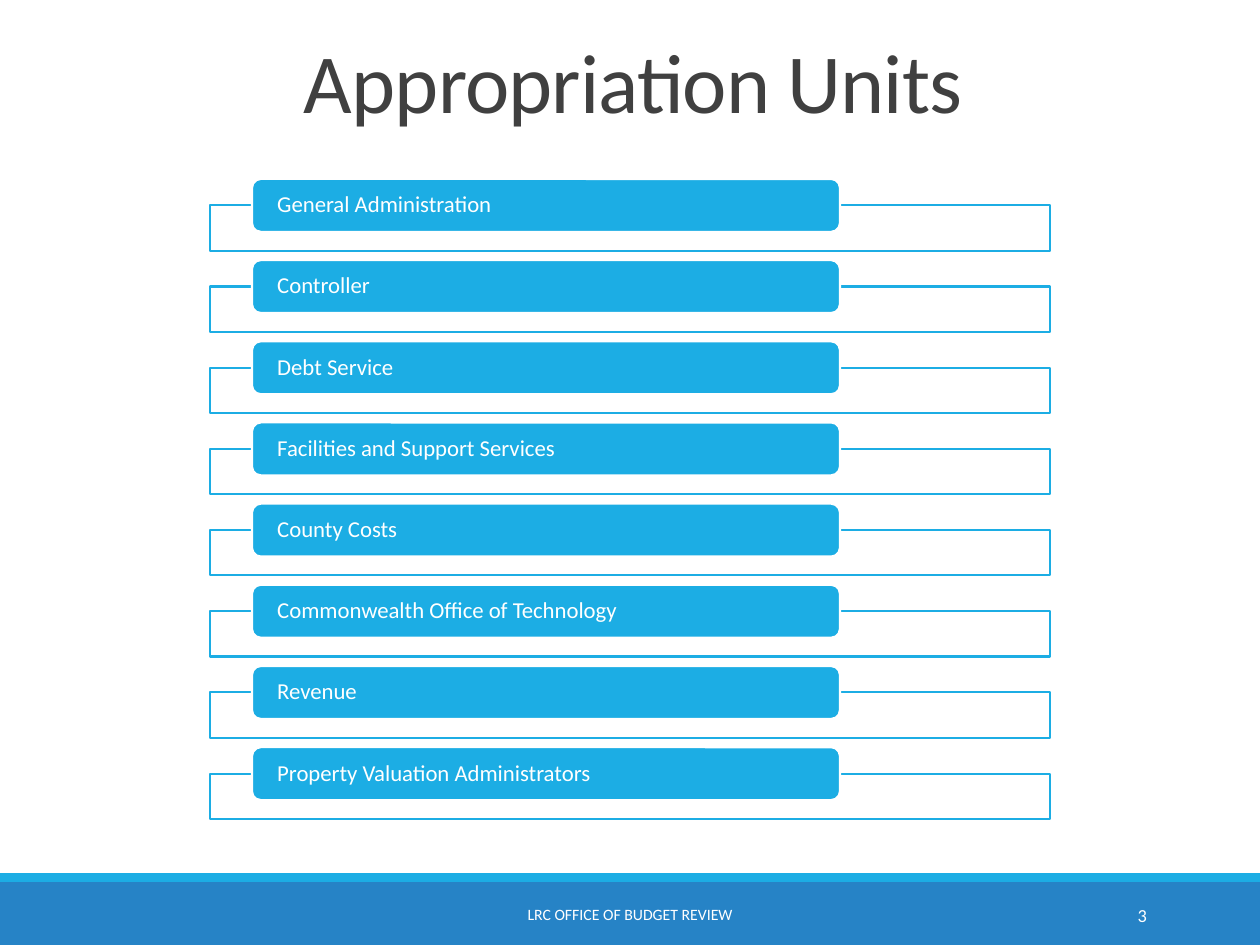
from lxml import etree
from pptx import Presentation
from pptx import util as u
from pptx.dml.color import RGBColor
from pptx.enum import shapes, text
from pptx.oxml.ns import qn

COLUMNS, ROWS = 30, 75
SKY, BLUE, WHITE, GRAY = "1CADE4", "2683C6", "FFFFFF", "404040"
UNITS = [
    "General Administration",
    "Controller",
    "Debt Service",
    "Facilities and Support Services",
    "County Costs",
    "Commonwealth Office of Technology",
    "Revenue",
    "Property Valuation Administrators",
]


def color(value):
    return RGBColor.from_string(value)


def write(frame, words, size, ink=WHITE, align=text.PP_ALIGN.LEFT,
          anchor=text.MSO_ANCHOR.MIDDLE, leading=1.0, spacing=0, inset=None):
    frame.word_wrap = True
    frame.vertical_anchor = anchor
    if inset is not None:
        frame.margin_left = frame.margin_right = u.Inches(inset)
        frame.margin_top = frame.margin_bottom = 0
    line = frame.paragraphs[0]
    line.alignment = align
    line.line_spacing = leading
    run = line.add_run()
    run.text = words
    run.font.name = "Calibri"
    run.font.size = u.Pt(size)
    run.font.color.rgb = color(ink)
    if spacing:
        run.font._element.set("spc", str(round(spacing * 100)))


class Deck:
    def __init__(self):
        self.show = Presentation()
        self.show.slide_width = u.Inches(10)
        self.show.slide_height = u.Inches(7.5)
        self.slide = self.show.slides.add_slide(self.show.slide_layouts[6])

    def place(self, column, row, columns, rows):
        across = self.show.slide_width / COLUMNS
        down = self.show.slide_height / ROWS
        return [round(n) for n in (column * across, row * down, columns * across, rows * down)]

    def box(self, *cells, fill, line=None, alpha=None, rounded=False):
        kind = shapes.MSO_SHAPE.ROUNDED_RECTANGLE if rounded else shapes.MSO_SHAPE.RECTANGLE
        box = self.slide.shapes.add_shape(kind, *self.place(*cells))
        box.shadow.inherit = False
        box.fill.solid()
        box.fill.fore_color.rgb = color(fill)
        if alpha is not None:
            tint = box.fill._xPr.find(qn("a:solidFill"))[0]
            etree.SubElement(tint, qn("a:alpha")).set("val", str(alpha * 1000))
        if line:
            box.line.color.rgb = color(line)
            box.line.width = u.Pt(1.25)
        else:
            box.line.fill.background()
        return box

    def label(self, *cells, words, **style):
        label = self.slide.shapes.add_textbox(*self.place(*cells))
        write(label.text_frame, words, **style)

    def unit(self, row, words):
        self.box(5, row + 2.1, 20, 3.6, fill=WHITE, line=SKY, alpha=90)
        tab = self.box(6, row, 14, 4.2, fill=SKY, line=WHITE, rounded=True)
        write(tab.text_frame, words, size=13, leading=0.9, inset=0.18)


def main():
    deck = Deck()
    deck.box(0, 70, COLUMNS, 5, fill=BLUE)
    deck.box(0, 69.3, COLUMNS, 0.7, fill=SKY)
    deck.label(9.06, 70.6, 11.88, 4, words="LRC OFFICE OF BUDGET REVIEW",
               size=9, align=text.PP_ALIGN.CENTER)
    deck.label(24.36, 70.6, 3.24, 4, words="3", size=10.5, align=text.PP_ALIGN.RIGHT)
    deck.label(2.7, 3.1, 24.75, 15.9, words="Appropriation Units", size=48, ink=GRAY,
               align=text.PP_ALIGN.CENTER, anchor=text.MSO_ANCHOR.TOP,
               leading=0.85, spacing=-0.5)
    first, last = 14.2, 59.3
    pitch = (last - first) / (len(UNITS) - 1)
    for index, name in enumerate(UNITS):
        deck.unit(first + index * pitch, name)
    deck.show.save("out.pptx")


if __name__ == "__main__":
    main()
